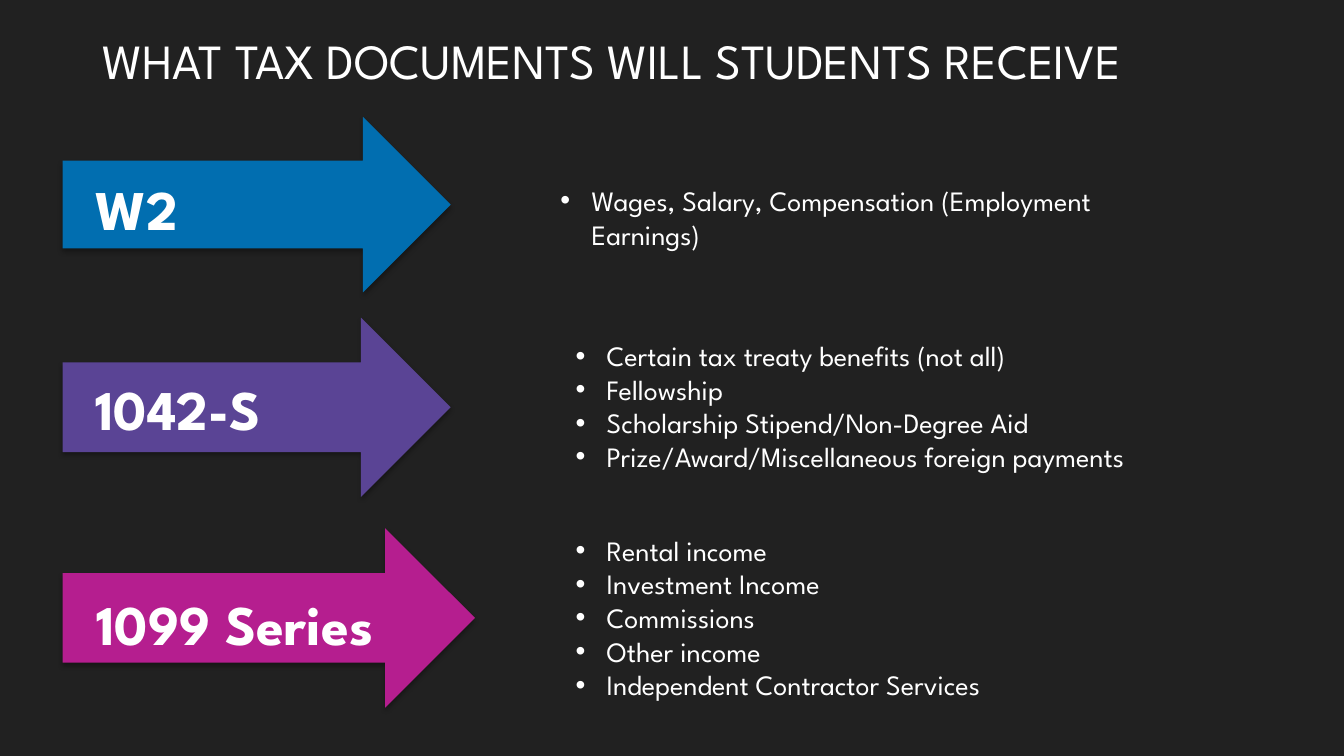
from lxml import etree
from pptx import Presentation
from pptx import util as u
from pptx.dml.color import RGBColor
from pptx.enum import shapes, text
from pptx.oxml import ns

WHITE = RGBColor(0xFF, 0xFF, 0xFF)
DARK = RGBColor(0x21, 0x21, 0x21)
BLUE = RGBColor(0x01, 0x6E, 0xB0)
PURPLE = RGBColor(0x5A, 0x44, 0x95)
PINK = RGBColor(0xB5, 0x1E, 0x8F)
FACE = "League Spartan"

TITLE = "WHAT TAX DOCUMENTS WILL STUDENTS RECEIVE"
FORMS = [
    {"name": "W2", "fill": BLUE, "arrow": (0.62, 1.16, 3.85, 1.74),
     "label": (0.85, 1.68, 3.03, 0.77), "list": (5.46, 1.77, 6.49, 0.78),
     "items": ["Wages, Salary, Compensation (Employment Earnings)"]},
    {"name": "1042-S", "fill": PURPLE, "arrow": (0.62, 3.15, 3.85, 1.78),
     "label": (0.85, 3.67, 3.03, 0.77), "list": (5.61, 3.31, 6.67, 1.45),
     "items": ["Certain tax treaty benefits (not all)", "Fellowship",
               "Scholarship Stipend/Non-Degree Aid",
               "Prize/Award/Miscellaneous foreign payments"]},
    {"name": "1099 Series", "fill": PINK, "arrow": (0.62, 5.24, 4.09, 1.78),
     "label": (0.86, 5.8, 3.22, 0.77), "list": (5.61, 5.24, 6.67, 2.12),
     "items": ["Rental income", "Investment Income", "Commissions",
               "Other income", "Independent Contractor Services"]},
]
HEAD = {"size": u.Pt(35.1), "name": FACE, "bold": False}
LABEL = {"size": u.Pt(40), "name": FACE, "bold": True}
BODY = {"size": u.Pt(20), "name": FACE, "bold": False}


def place(box):
    return [u.Inches(n) for n in box]


def bullet(para):
    props = para._p.get_or_add_pPr()
    props.set("marL", str(u.Inches(0.31)))
    props.set("indent", str(-u.Inches(0.31)))
    font = etree.SubElement(props, ns.qn("a:buFont"))
    font.set("typeface", "Arial")
    mark = etree.SubElement(props, ns.qn("a:buChar"))
    mark.set("char", "•")


def write(slide, box, lines, style, dots=False):
    frame = slide.shapes.add_textbox(*place(box)).text_frame
    frame.word_wrap = True
    frame.vertical_anchor = text.MSO_ANCHOR.TOP
    for i, line in enumerate(lines):
        para = frame.paragraphs[0] if i == 0 else frame.add_paragraph()
        if dots:
            bullet(para)
        run = para.add_run()
        run.text = line
        for key, value in style.items():
            setattr(run.font, key, value)
        run.font.color.rgb = WHITE
    return frame


def shade(shape):
    shape.shadow.inherit = False
    effects = shape._element.spPr.find(ns.qn("a:effectLst"))
    cast = etree.SubElement(effects, ns.qn("a:outerShdw"))
    sizes = {"blurRad": u.Pt(3.5), "dist": u.Pt(2.2), "dir": 90 * 60000,
             "rotWithShape": 0}
    for key, value in sizes.items():
        cast.set(key, str(value))
    tone = etree.SubElement(cast, ns.qn("a:srgbClr"))
    tone.set("val", "000000")
    etree.SubElement(tone, ns.qn("a:alpha")).set("val", "32000")


def main():
    deck = Presentation()
    deck.slide_width, deck.slide_height = place((13.33, 7.5))
    slide = deck.slides.add_slide(deck.slide_layouts[6])
    slide.background.fill.solid()
    slide.background.fill.fore_color.rgb = DARK
    for form in FORMS:
        write(slide, form["list"], form["items"], BODY, dots=True)
        arrow = slide.shapes.add_shape(
            shapes.MSO_SHAPE.RIGHT_ARROW, *place(form["arrow"]))
        arrow.fill.solid()
        arrow.fill.fore_color.rgb = form["fill"]
        arrow.line.fill.background()
        shade(arrow)
        write(slide, form["label"], [form["name"]], LABEL)
    title = write(slide, (0.92, 0.32, 11.94, 0.72), [TITLE], HEAD)
    title.paragraphs[0].line_spacing = 0.9
    deck.save("out.pptx")


if __name__ == "__main__":
    main()
